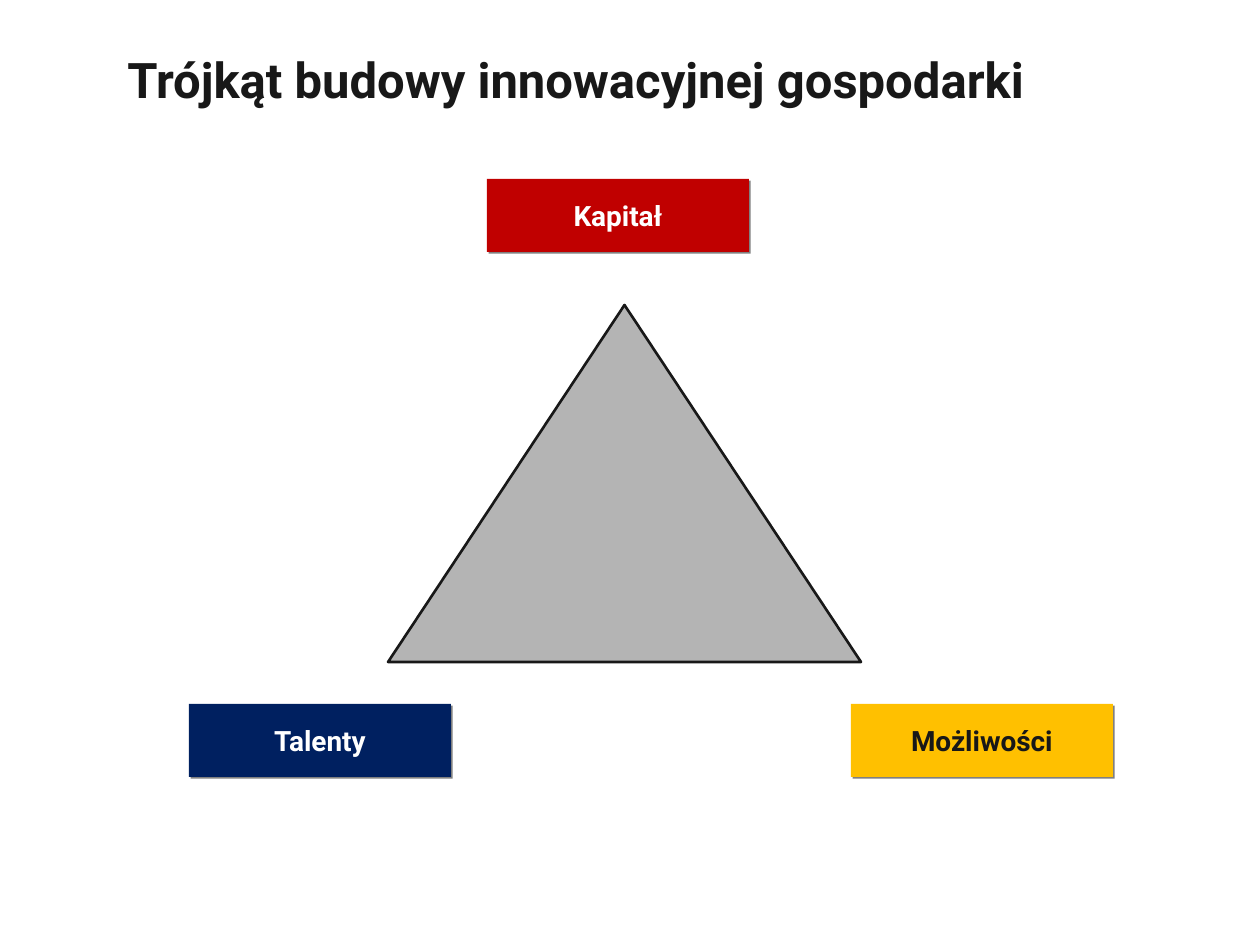
import pptx
import pptx.util
import pptx.dml.color
import pptx.enum.shapes
import pptx.enum.text
import pptx.oxml

SCALE = 914400 / 126
THEME = {
    "font": "Roboto",
    "title_size": 28,
    "label_size": 16,
    "dark": "181818",
    "light": "FFFFFF",
    "triangle": "B4B4B4",
    "talent": "002060",
    "opportunity": "FFC000",
    "capital": "C00000",
}
SHADOW = (
    '<a:effectLst xmlns:a="http://schemas.openxmlformats.org/drawingml/2006/main">'
    '<a:outerShdw blurRad="0" dist="17780" dir="2700000" algn="ctr" rotWithShape="0">'
    '<a:srgbClr val="808080"/></a:outerShdw></a:effectLst>'
)


def px(*lengths):
    return [pptx.util.Emu(round(length * SCALE)) for length in lengths]


def write(shape, text, size, color, alignment):
    frame = shape.text_frame
    frame.word_wrap = True
    frame.vertical_anchor = pptx.enum.text.MSO_ANCHOR.MIDDLE
    frame.text = text
    paragraph = frame.paragraphs[0]
    paragraph.alignment = alignment
    font = paragraph.runs[0].font
    font.name = THEME["font"]
    font.size = pptx.util.Pt(size)
    font.bold = True
    font.color.rgb = pptx.dml.color.RGBColor.from_string(THEME[color])


presentation = pptx.Presentation()
presentation.slide_width, presentation.slide_height = px(1260, 945)
slide = presentation.slides.add_slide(presentation.slide_layouts[6])

title = slide.shapes.add_textbox(*px(115, 21, 1166, 116))
write(title, "Trójkąt budowy innowacyjnej gospodarki", THEME["title_size"], "dark",
      pptx.enum.text.PP_ALIGN.LEFT)

triangle = slide.shapes.add_shape(
    pptx.enum.shapes.MSO_SHAPE.ISOSCELES_TRIANGLE, *px(388, 305, 473, 357))
triangle.shadow.inherit = False
triangle.fill.solid()
triangle.fill.fore_color.rgb = pptx.dml.color.RGBColor.from_string(THEME["triangle"])
triangle.line.color.rgb = pptx.dml.color.RGBColor.from_string(THEME["dark"])
triangle.line.width = pptx.util.Pt(1.5)

corners = [
    ("Talenty", 189, 704, "talent", "light"),
    ("Możliwości", 851, 704, "opportunity", "dark"),
    ("Kapitał", 487, 179, "capital", "light"),
]
for text, left, top, fill, color in corners:
    label = slide.shapes.add_shape(
        pptx.enum.shapes.MSO_SHAPE.RECTANGLE, *px(left, top, 262, 73))
    label.fill.solid()
    label.fill.fore_color.rgb = pptx.dml.color.RGBColor.from_string(THEME[fill])
    label.line.fill.background()
    label._element.spPr.append(pptx.oxml.parse_xml(SHADOW))
    frame = label.text_frame
    frame.margin_left = frame.margin_right = pptx.util.Inches(0.1)
    frame.margin_top = frame.margin_bottom = pptx.util.Inches(0.1)
    write(label, text, THEME["label_size"], color, pptx.enum.text.PP_ALIGN.CENTER)

presentation.save("out.pptx")
